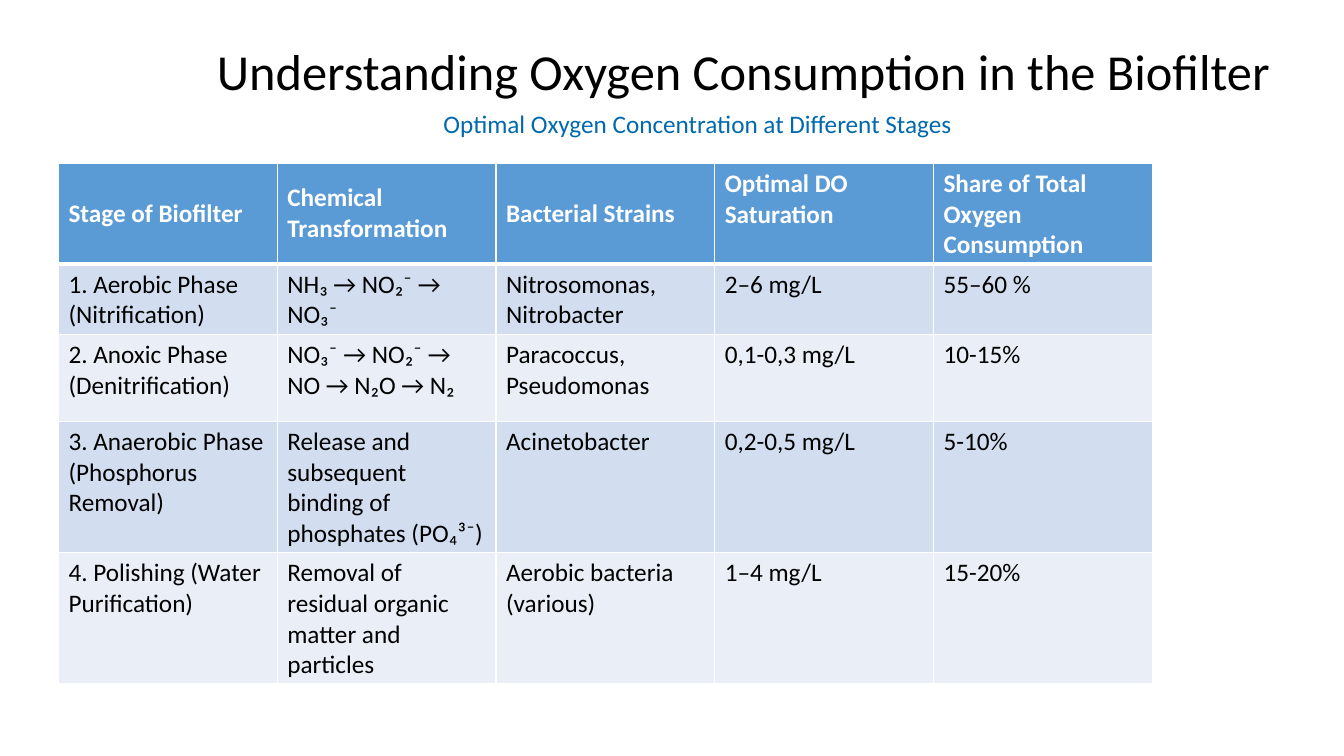
from lxml.etree import SubElement
from pptx import Presentation
from pptx.dml.color import RGBColor
from pptx.enum.text import MSO_ANCHOR, PP_ALIGN
from pptx.oxml.ns import qn
from pptx.util import Inches, Pt

BLACK = RGBColor(0x00, 0x00, 0x00)
WHITE = RGBColor(0xFF, 0xFF, 0xFF)
BLUE = RGBColor(0x00, 0x6A, 0xAC)
HEAD = RGBColor(0x5B, 0x9B, 0xD5)
BANDS = (RGBColor(0xEA, 0xEF, 0xF7), RGBColor(0xD2, 0xDE, 0xEF))

ROWS = (
    ("Stage of Biofilter", "Chemical Transformation", "Bacterial Strains",
     "Optimal DO Saturation", "Share of Total Oxygen Consumption"),
    ("1. Aerobic Phase (Nitrification)", "NH₃ → NO₂⁻ → NO₃⁻",
     "Nitrosomonas, Nitrobacter", "2–6 mg/L", "55–60 %"),
    ("2. Anoxic Phase (Denitrification)", "NO₃⁻ → NO₂⁻ → NO → N₂O → N₂",
     "Paracoccus, Pseudomonas", "0,1-0,3 mg/L", "10-15%"),
    ("3. Anaerobic Phase (Phosphorus Removal)",
     "Release and subsequent binding of phosphates (PO₄³⁻)",
     "Acinetobacter", "0,2-0,5 mg/L", "5-10%"),
    ("4. Polishing (Water Purification)",
     "Removal of residual organic matter and particles",
     "Aerobic bacteria (various)", "1–4 mg/L", "15-20%"),
)
HEIGHTS = (1.0, 0.7, 0.86, 1.3, 1.3)
WIDTH = 2.17


class Deck:
    font = "Calibri"
    size = 18

    def __init__(self):
        self.show = Presentation()
        self.show.slide_width = Inches(13.33)
        self.show.slide_height = Inches(7.5)
        self.slide = self.show.slides.add_slide(self.show.slide_layouts[5])

    def style(self, frame, text, color, size=None, bold=False):
        frame.text = text
        frame.word_wrap = True
        part = frame.paragraphs[0]
        part.alignment = PP_ALIGN.LEFT
        for run in part.runs:
            run.font.name = self.font
            run.font.size = Pt(size or self.size)
            run.font.bold = bold
            run.font.color.rgb = color
        return part

    def title(self, text, left, top, width, height):
        shape = self.slide.shapes.title
        shape.left, shape.top = Inches(left), Inches(top)
        shape.width, shape.height = Inches(width), Inches(height)
        self.style(shape.text_frame, text, BLACK, 36).line_spacing = 0.9
        shape.text_frame.vertical_anchor = MSO_ANCHOR.MIDDLE

    def label(self, text, left, top, width, height):
        box = self.slide.shapes.add_textbox(
            Inches(left), Inches(top), Inches(width), Inches(height))
        self.style(box.text_frame, text, BLUE)

    def border(self, cell, row):
        props = cell._tc.get_or_add_tcPr()
        thick = {0: "lnB", 1: "lnT"}.get(row)
        for side in ("lnL", "lnR", "lnT", "lnB"):
            width = Pt(3 if side == thick else 1)
            line = SubElement(props, qn("a:" + side), w=str(int(width)))
            fill = SubElement(line, qn("a:solidFill"))
            SubElement(fill, qn("a:srgbClr"), val=str(WHITE))

    def table(self, rows, heights, width, left, top):
        count = len(rows[0])
        grid = self.slide.shapes.add_table(
            len(rows), count, Inches(left), Inches(top),
            Inches(width * count), Inches(sum(heights))).table
        for col in grid.columns:
            col.width = Inches(width)
        for y, (texts, height) in enumerate(zip(rows, heights)):
            grid.rows[y].height = Inches(height)
            head = y == 0
            for x, text in enumerate(texts):
                cell = grid.cell(y, x)
                self.style(cell.text_frame, text,
                           WHITE if head else BLACK, bold=head)
                if head and x < 3:
                    cell.vertical_anchor = MSO_ANCHOR.MIDDLE
                self.border(cell, y)
                cell.fill.solid()
                cell.fill.fore_color.rgb = HEAD if head else BANDS[y % 2]


def main():
    deck = Deck()
    deck.title("Understanding Oxygen Consumption in the Biofilter",
               2.05, 0.24, 11.15, 0.99)
    deck.label("Optimal Oxygen Concentration at Different Stages",
               4.3, 1.03, 6.69, 0.4)
    deck.table(ROWS, HEIGHTS, WIDTH, 0.58, 1.62)
    deck.show.save("out.pptx")


if __name__ == "__main__":
    main()
